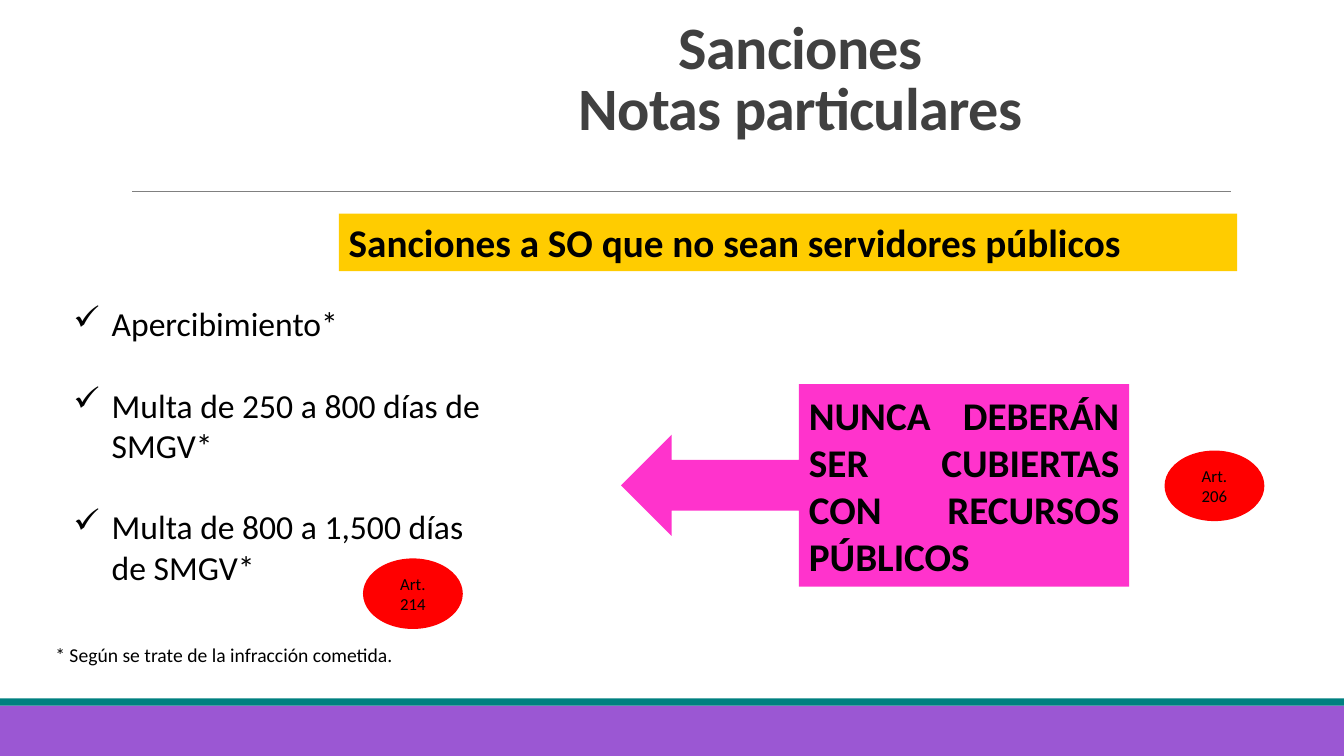
from pptx import Presentation
from pptx.dml.color import RGBColor
from pptx.enum.shapes import MSO_CONNECTOR, MSO_SHAPE
from pptx.enum.text import MSO_ANCHOR, PP_ALIGN
from pptx.oxml.ns import qn
from pptx.util import Inches, Pt
from lxml.etree import SubElement


def color(value):
    return RGBColor.from_string(value)


def add_block(box, text="", size=12, fill=None, preset=MSO_SHAPE.RECTANGLE, bold=False,
              align=PP_ALIGN.LEFT, anchor=MSO_ANCHOR.TOP, text_color="000000"):
    """Add a filled preset shape, or a text box when there is no fill."""
    place = [Inches(length) for length in box]
    if fill:
        shape = slide.shapes.add_shape(preset, *place)
        shape.shadow.inherit = False
        shape.fill.solid()
        shape.fill.fore_color.rgb = color(fill)
        shape.line.fill.background()
    else:
        shape = slide.shapes.add_textbox(*place)
    frame = shape.text_frame
    frame.word_wrap = True
    frame.vertical_anchor = anchor
    frame.text = text
    for paragraph in frame.paragraphs:
        paragraph.alignment = align
        paragraph.font.name = "Calibri"
        paragraph.font.size = Pt(size)
        paragraph.font.bold = bold
        paragraph.font.color.rgb = color(text_color)
    return shape


presentation = Presentation()
presentation.slide_width = Inches(13.33)
presentation.slide_height = Inches(7.5)
slide = presentation.slides.add_slide(presentation.slide_layouts[6])

# Footer bands and title rule
add_block((0, 7, 13.33, 0.5), fill="9B57D3")
add_block((0, 6.93, 13.33, 0.07), fill="008080")
rule = slide.shapes.add_connector(
    MSO_CONNECTOR.STRAIGHT, Inches(1.31), Inches(1.9), Inches(12.21), Inches(1.9))
rule.line.color.rgb = color("808080")
rule.line.width = Pt(0.5)
SubElement(rule._element.spPr, qn("a:effectLst"))

# Headings
title = add_block((2.7, 0.12, 10.48, 1.35), "Sanciones\vNotas particulares", 43, bold=True,
                  align=PP_ALIGN.CENTER, anchor=MSO_ANCHOR.BOTTOM, text_color="404040")
title_paragraph = title.text_frame.paragraphs[0]
title_paragraph.line_spacing = 0.85
for run in title_paragraph.runs:
    run.font._element.set("spc", "-50")
add_block((3.36, 2.12, 8.91, 0.57), "Sanciones a SO que no sean servidores públicos", 28,
          fill="FFCC00", bold=True)

# Checklist of sanctions
sanctions = ["Apercibimiento*", "Multa de 250 a 800 días de SMGV*",
             "Multa de 800 a 1,500 días de SMGV*"]
checklist = add_block((0.63, 2.96, 4.27, 2.93), "\n".join(sanctions), 24)
for number, paragraph in enumerate(checklist.text_frame.paragraphs):
    if number:
        paragraph.space_before = Pt(29.3)
    properties = paragraph._p.get_or_add_pPr()
    properties.set("marL", str(Inches(0.38)))
    properties.set("indent", str(Inches(-0.38)))
    bullet = properties.makeelement(qn("a:buChar"), {"char": "✓"})
    properties.find(qn("a:defRPr")).addprevious(bullet)
add_block((0.45, 6.33, 4.62, 0.34), "* Según se trate de la infracción cometida.", 14)

# Warning and article references
add_block((6.16, 3.81, 5.04, 2.01), "NUNCA DEBERÁN SER CUBIERTAS CON RECURSOS PÚBLICOS", 28,
          fill="FF33CC", preset=MSO_SHAPE.LEFT_ARROW_CALLOUT, bold=True,
          align=PP_ALIGN.JUSTIFY, anchor=MSO_ANCHOR.MIDDLE)
for left, top, article in [(11.55, 4.47, "Art. 206"), (3.6, 5.54, "Art. 214")]:
    add_block((left, top, 0.99, 0.7), article, 12, fill="FF0000", preset=MSO_SHAPE.OVAL,
              align=PP_ALIGN.CENTER, anchor=MSO_ANCHOR.MIDDLE)

presentation.save("out.pptx")
